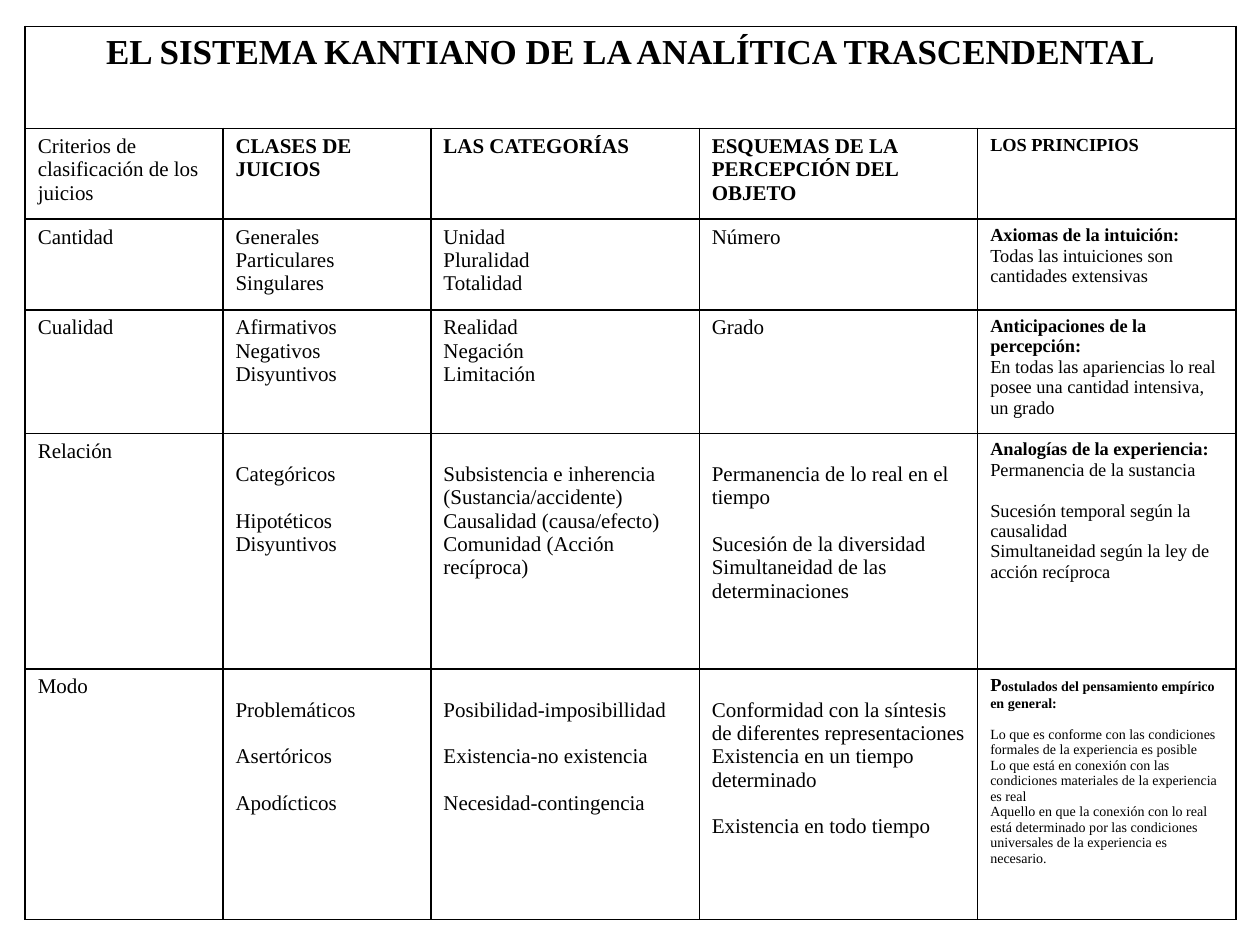
"""Build a one-slide table of the Kantian system of transcendental analytic."""
import pptx
import pptx.dml.color
import pptx.enum.text
import pptx.oxml
import pptx.oxml.ns
import pptx.util
from pptx.util import Inches, Pt

FONT, INK, PAPER = "Times New Roman", "000000", "FFFFFF"
LEFT, TOP = 0.2, 0.21
COLUMNS = [1.57, 1.65, 2.13, 2.21, 2.05]
ROWS = [0.81, 0.72, 0.72, 0.98, 1.87, 1.99]
BODY, PRINCIPLE, SMALL = 12, 10.5, 8
LINE_HEIGHT = 1.11
LOWERED_ROWS, LOWERED_COLUMNS = (4, 5), (1, 2, 3)

TITLE = "EL SISTEMA KANTIANO DE LA ANALÍTICA TRASCENDENTAL"
HEADINGS = ["Criterios de clasificación de los juicios", "CLASES DE JUICIOS", "LAS CATEGORÍAS",
            "ESQUEMAS DE LA PERCEPCIÓN DEL OBJETO", "LOS PRINCIPIOS"]

# An empty string in a list of lines stands for a one-line gap.
CRITERIA = [
    (["Cantidad"], ["Generales", "Particulares", "Singulares"],
     ["Unidad", "Pluralidad", "Totalidad"], ["Número"]),
    (["Cualidad"], ["Afirmativos", "Negativos", "Disyuntivos"],
     ["Realidad", "Negación", "Limitación"], ["Grado"]),
    (["Relación"], ["Categóricos", "", "Hipotéticos", "Disyuntivos"],
     ["Subsistencia e inherencia (Sustancia/accidente)", "Causalidad (causa/efecto)",
      "Comunidad (Acción recíproca)"],
     ["Permanencia de lo real en el tiempo", "", "Sucesión de la diversidad",
      "Simultaneidad de las determinaciones"]),
    (["Modo"], ["Problemáticos", "", "Asertóricos", "", "Apodícticos"],
     ["Posibilidad-imposibillidad", "", "Existencia-no existencia", "", "Necesidad-contingencia"],
     ["Conformidad con la síntesis de diferentes representaciones",
      "Existencia en un tiempo determinado", "", "Existencia en todo tiempo"]),
]
PRINCIPLES = [
    ([("Axiomas de la intuición:", PRINCIPLE)], PRINCIPLE,
     ["Todas las intuiciones son cantidades extensivas"]),
    ([("Anticipaciones de la percepción:", PRINCIPLE)], PRINCIPLE,
     ["En todas las apariencias lo real posee una cantidad intensiva, un grado"]),
    ([("Analogías de la experiencia:", PRINCIPLE)], PRINCIPLE,
     ["Permanencia de la sustancia", "", "Sucesión temporal según la causalidad",
      "Simultaneidad según la ley de acción recíproca"]),
    ([("P", PRINCIPLE), ("ostulados del pensamiento empírico en general:", SMALL)], SMALL,
     ["", "Lo que es conforme con las condiciones formales de la experiencia es posible",
      "Lo que está en conexión con las condiciones materiales de la experiencia es real",
      "Aquello en que la conexión con lo real está determinado por las condiciones "
      "universales de la experiencia es necesario."]),
]


def color(value):
    """Turn a hex string into a colour."""
    return pptx.dml.color.RGBColor.from_string(value)


def plain(lines, size, bold=False):
    """Give each line as a list of (text, size, bold) spans; a gap stays empty."""
    return [[(line, size, bold)] if line else [] for line in lines]


def write(cell, lines, **paragraph_format):
    """Write lines of spans as paragraphs, turning gaps into space before."""
    gap, first = False, True
    for spans in lines:
        if not spans:
            gap = True
            continue
        para = cell.text_frame.paragraphs[0] if first else cell.text_frame.add_paragraph()
        space = Pt(spans[0][1] * LINE_HEIGHT) if gap else Pt(0)
        for name, value in {"space_before": space, **paragraph_format}.items():
            setattr(para, name, value)
        for text, size, bold in spans:
            span = para.add_run()
            span.text = text
            for name, value in {"name": FONT, "size": Pt(size), "bold": bold}.items():
                setattr(span.font, name, value)
            span.font.color.rgb = color(INK)
        gap = first = False


def frame(cell):
    """Give a cell black borders and a plain fill."""
    properties = cell._tc.get_or_add_tcPr()
    for side in ("lnL", "lnR", "lnT", "lnB"):
        properties.append(pptx.oxml.parse_xml(
            f'<a:{side} {pptx.oxml.ns.nsdecls("a")} w="12700"><a:solidFill>'
            f'<a:srgbClr val="{INK}"/></a:solidFill></a:{side}>'))
    cell.fill.solid()
    cell.fill.fore_color.rgb = color(PAPER)


def main():
    """Create the deck and save it."""
    deck = pptx.Presentation()
    deck.slide_width, deck.slide_height = Inches(10), Inches(7.5)
    page = deck.slides.add_slide(deck.slide_layouts[6])
    table = page.shapes.add_table(len(ROWS), len(COLUMNS), Inches(LEFT), Inches(TOP),
                                  Inches(sum(COLUMNS)), Inches(sum(ROWS))).table
    table.first_row = table.horz_banding = False
    for column, width in zip(table.columns, COLUMNS):
        column.width = Inches(width)
    for row, height in zip(table.rows, ROWS):
        row.height = Inches(height)
    for cell in table.iter_cells():
        frame(cell)

    table.cell(0, 0).merge(table.cell(0, len(COLUMNS) - 1))
    write(table.cell(0, 0), plain([TITLE], 20, True), alignment=pptx.enum.text.PP_ALIGN.CENTER)
    last = len(COLUMNS) - 1
    for index, heading in enumerate(HEADINGS):
        size = PRINCIPLE if index == last else BODY
        write(table.cell(1, index), plain([heading], size, index > 0))
    for row, (criterion, principle) in enumerate(zip(CRITERIA, PRINCIPLES), start=2):
        for index, lines in enumerate(criterion):
            cell = table.cell(row, index)
            if row in LOWERED_ROWS and index in LOWERED_COLUMNS:
                cell.margin_top = Inches(0.05) + Pt(BODY * LINE_HEIGHT)
            write(cell, plain(lines, BODY))
        heading, size, lines = principle
        bold_heading = [(text, points, True) for text, points in heading]
        write(table.cell(row, last), [bold_heading] + plain(lines, size))
    deck.save("out.pptx")


if __name__ == "__main__":
    main()
